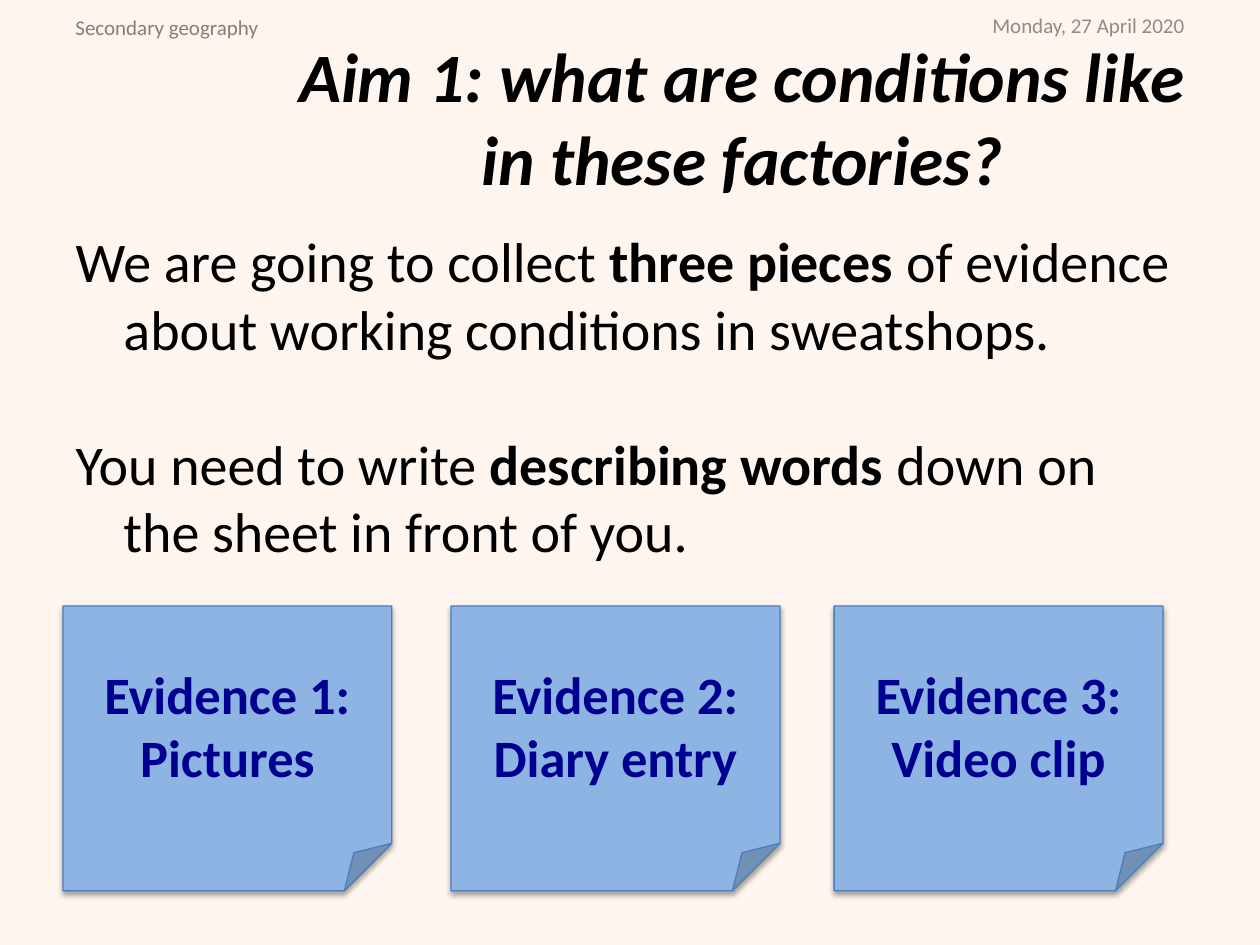
from lxml.etree import SubElement
from pptx import Presentation
from pptx.dml.color import RGBColor
from pptx.enum.shapes import MSO_SHAPE as Preset
from pptx.enum.text import MSO_ANCHOR as Anchor, MSO_AUTO_SIZE as AutoSize, PP_ALIGN as Align
from pptx.oxml.ns import qn
from pptx.util import Inches, Pt

CREAM = RGBColor(0xFE, 0xF5, 0xEE)
BLACK = RGBColor(0, 0, 0)
NOTE_BLUE = RGBColor(0x8E, 0xB4, 0xE3)
EDGE_BLUE = RGBColor(0x4B, 0x7E, 0xBC)
NAVY = RGBColor(0, 0, 0x90)
LIGHT_GREY = RGBColor(0x8C, 0x8C, 0x8C)
GREY = RGBColor(0x80, 0x80, 0x80)

AIM = "Aim 1: what are conditions like in these factories?"
INSTRUCTIONS = [
    (6, ("We are going to collect ", "three pieces ",
         "of evidence about working conditions in sweatshops.")),
    (39, ("You need to write ", "describing words ",
          "down on the sheet in front of you.")),
]
EVIDENCE = [(0.5, "Pictures"), (3.58, "Diary entry"), (6.62, "Video clip")]
HEADERS = [
    ("Monday, 27 April 2020", (6.53, 0, 2.97, 0.4), LIGHT_GREY, Align.RIGHT, Anchor.MIDDLE, True),
    ("Secondary geography", (0.5, 0.07, 1.69, 0.3), GREY, Align.LEFT, Anchor.TOP, False),
]
NOTE_TOP, NOTE_WIDTH, NOTE_HEIGHT = 4.81, 2.61, 2.26
HANGING_INDENT = Inches(0.38)


def place(shape, box):
    for side, length in zip(("left", "top", "width", "height"), box):
        setattr(shape, side, Inches(length))


def add_run(paragraph, words, size, color, **styles):
    run = paragraph.add_run()
    run.text = words
    run.font.color.rgb = color
    for name, value in {"name": "Calibri", "size": Pt(size), **styles}.items():
        setattr(run.font, name, value)


def set_frame(frame, anchor, wrap=True):
    formats = {"vertical_anchor": anchor, "word_wrap": wrap, "auto_size": AutoSize.NONE}
    for name, value in formats.items():
        setattr(frame, name, value)


def fill_title(title):
    place(title, (2.1, 0.3, 7.58, 1.25))
    set_frame(title.text_frame, Anchor.MIDDLE)
    heading = title.text_frame.paragraphs[0]
    heading.alignment = Align.CENTER
    add_run(heading, AIM, 39.6, BLACK, bold=True, italic=True)


def fill_body(body):
    place(body, (0.5, 1.75, 9, 4.95))
    set_frame(body.text_frame, Anchor.TOP)
    for index, (gap, pieces) in enumerate(INSTRUCTIONS):
        frame = body.text_frame
        instruction = frame.add_paragraph() if index else frame.paragraphs[0]
        instruction.space_before = Pt(gap)
        for position, piece in enumerate(pieces):
            add_run(instruction, piece, 32, BLACK, bold=position == 1)
        properties = instruction._p.get_or_add_pPr()
        properties.set("marL", str(HANGING_INDENT))
        properties.set("indent", str(-HANGING_INDENT))
        SubElement(properties, qn("a:buNone"))


def add_evidence(slide, number, left, kind):
    box = [Inches(length) for length in (left, NOTE_TOP, NOTE_WIDTH, NOTE_HEIGHT)]
    note = slide.shapes.add_shape(Preset.FOLDED_CORNER, *box)
    note.fill.solid()
    note.fill.fore_color.rgb = NOTE_BLUE
    note.line.color.rgb = EDGE_BLUE
    note.line.width = Pt(0.75)
    set_frame(note.text_frame, Anchor.MIDDLE)
    label = note.text_frame.paragraphs[0]
    for line, words in ((label, f"Evidence {number}:"), (note.text_frame.add_paragraph(), kind)):
        line.alignment = Align.CENTER
        add_run(line, words, 30, NAVY, bold=True)


def add_header(slide, words, box, color, align, anchor, wrap):
    header = slide.shapes.add_textbox(*[Inches(length) for length in box])
    set_frame(header.text_frame, anchor, wrap)
    line = header.text_frame.paragraphs[0]
    line.alignment = align
    add_run(line, words, 12, color)


def main():
    """Build the lesson slide on factory conditions."""
    deck = Presentation()
    deck.slide_width, deck.slide_height = Inches(10), Inches(7.5)
    slide = deck.slides.add_slide(deck.slide_layouts[1])
    slide.background.fill.solid()
    slide.background.fill.fore_color.rgb = CREAM
    fill_title(slide.shapes.title)
    fill_body(slide.placeholders[1])
    for number, (left, kind) in enumerate(EVIDENCE, 1):
        add_evidence(slide, number, left, kind)
    for header in HEADERS:
        add_header(slide, *header)
    deck.save("out.pptx")


if __name__ == "__main__":
    main()
